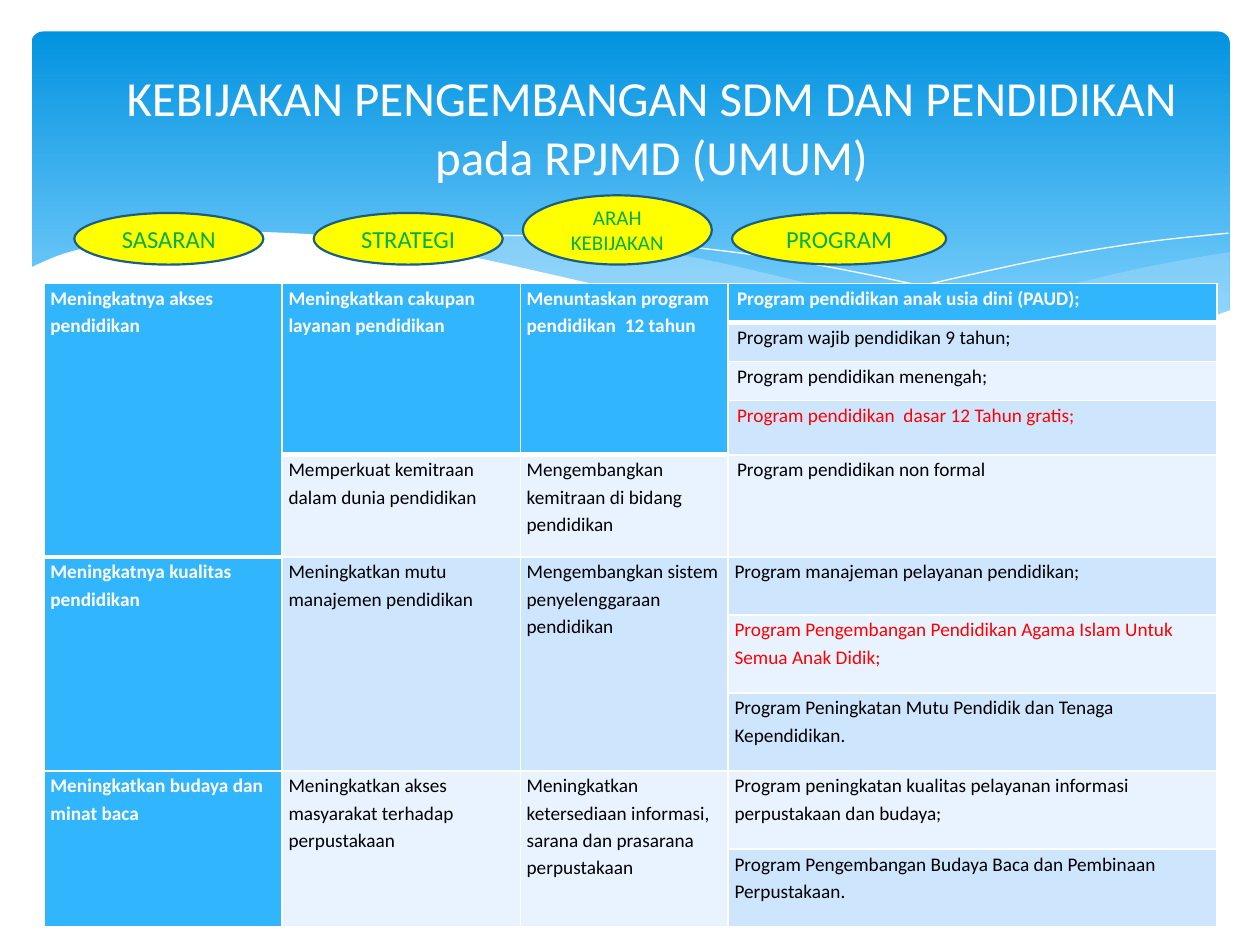
import pptx
import pptx.dml.color
import pptx.enum.shapes
import pptx.enum.text
import pptx.oxml
import pptx.oxml.ns
import pptx.util
from lxml import etree

COLORS = {
    "white": "FFFFFF", "black": "000000", "red": "FF0000", "green": "00B050",
    "yellow": "FFFF00", "outline": "195F84", "sky_top": "0293E0",
    "sky_bottom": "83D3FE", "wave": "C6E7FC", "header": "31B6FD",
    "odd": "CEE5FE", "even": "E8F3FF",
}
FONT = "Calibri"
UNIT = 9144  # one grid step: 1000 columns by 750 rows on the slide

# Knots of the waves, in grid steps
RIGHT_WAVE_TOP = [(976, 200), (935, 207), (891, 216), (832, 230), (753, 248), (661, 265)]
RIGHT_WAVE_BOTTOM = [(661, 265), (705, 271), (757, 276), (814, 278), (863, 275),
                     (913, 267), (949, 257), (976, 247)]
MIDDLE_WAVE_TOP = [(893, 273), (837, 265), (775, 254), (706, 240), (629, 222),
                   (569, 208), (514, 198), (442, 189), (361, 185), (286, 191)]
MIDDLE_WAVE_BOTTOM = [(286, 191), (342, 199), (404, 211), (449, 222), (530, 240),
                      (618, 258), (695, 270), (761, 277), (818, 278), (893, 273)]
LONG_LINE = [(309, 195), (344, 190), (401, 187), (469, 189), (556, 197),
             (636, 208), (727, 226), (831, 251), (907, 272)]
SHORT_LINE = [(613, 257), (672, 241), (748, 223), (836, 204), (910, 192), (975, 185)]
WHITE_WAVE = [(977, 246), (930, 262), (875, 273), (809, 277), (726, 272), (648, 262),
              (555, 245), (447, 220), (365, 202), (292, 190), (230, 185), (177, 184),
              (132, 186), (95, 191), (67, 197), (46, 203), (23, 213)]

OVALS = [("SASARAN", 59, 169, 150, 41, 14), ("STRATEGI", 249, 169, 150, 41, 14),
         ("ARAH KEBIJAKAN", 415, 155, 150, 55, 12), ("PROGRAM", 581, 169, 170, 41, 14)]

COLUMNS = [189, 189, 165, 388]
ROWS = [31, 31, 31, 43, 81, 46, 62, 62, 62, 62]
# (first row, column, rows spanned, text)
GOALS = [
    (0, 0, 5, "Meningkatnya akses pendidikan"),
    (0, 1, 4, "Meningkatkan cakupan layanan pendidikan"),
    (0, 2, 4, "Menuntaskan program pendidikan  12 tahun"),
    (4, 1, 1, "Memperkuat kemitraan dalam dunia pendidikan"),
    (4, 2, 1, "Mengembangkan kemitraan di bidang pendidikan"),
    (5, 0, 3, "Meningkatnya kualitas pendidikan"),
    (5, 1, 3, "Meningkatkan mutu manajemen pendidikan"),
    (5, 2, 3, "Mengembangkan sistem penyelenggaraan pendidikan"),
    (8, 0, 2, "Meningkatkan budaya dan minat baca"),
    (8, 1, 2, "Meningkatkan akses masyarakat terhadap perpustakaan"),
    (8, 2, 2, "Meningkatkan ketersediaan informasi, sarana dan prasarana perpustakaan"),
]
PROGRAMS = [
    "Program pendidikan anak usia dini (PAUD);",
    "Program wajib pendidikan 9 tahun;",
    "Program pendidikan menengah;",
    "Program pendidikan  dasar 12 Tahun gratis;",
    "Program pendidikan non formal",
    "Program manajeman pelayanan pendidikan;",
    "Program Pengembangan Pendidikan Agama Islam Untuk Semua Anak Didik;",
    "Program Peningkatan Mutu Pendidik dan Tenaga Kependidikan.",
    "Program peningkatan kualitas pelayanan informasi perpustakaan dan budaya;",
    "Program Pengembangan Budaya Baca dan Pembinaan Perpustakaan.",
]
RED_ROWS = (3, 6)
INDENTED_ROWS = 5


def rgb(name):
    return pptx.dml.color.RGBColor.from_string(COLORS[name])


def grid(*steps):
    return [round(step * UNIT) for step in steps]


def paint(target, name):
    target.fill.solid()
    target.fill.fore_color.rgb = rgb(name)


def write(frame, text, size, color, bold=False, centred=True):
    frame.text = text
    frame.word_wrap = True
    para = frame.paragraphs[0]
    if centred:
        para.alignment = pptx.enum.text.PP_ALIGN.CENTER
    font = para.runs[0].font
    font.name, font.size, font.bold = FONT, pptx.util.Pt(size), bold
    font.color.rgb = rgb(color)
    return para


def smooth(knots, steps=5):
    """Points of a Catmull-Rom curve through the knots."""
    padded = [knots[0], *knots, knots[-1]]
    points = [knots[0]]
    for a, b, c, d in zip(padded, padded[1:], padded[2:], padded[3:]):
        for step in range(1, steps + 1):
            t = step / steps
            points.append(tuple(
                q + t / 2 * (r - p + t * (2 * p - 5 * q + 4 * r - s + t * (3 * (q - r) + s - p)))
                for p, q, r, s in zip(a, b, c, d)))
    return points


def add_wave(page, box, points, fill=None, alpha=None):
    """Filled wave, or a white hairline when no fill is given."""
    places = [grid(box[0] + x, box[1] + y) for x, y in points]
    builder = page.shapes.build_freeform(*places[0], scale=1.0)
    builder.add_line_segments(places[1:], close=fill is not None)
    shape = builder.convert_to_shape()
    shape.shadow.inherit = False
    if fill is None:
        shape.fill.background()
        shape.line.color.rgb = rgb("white")
        shape.line.width = 0
        return
    paint(shape, fill)
    shape.line.fill.background()
    if alpha:
        color = shape.fill._xPr.find(".//" + pptx.oxml.ns.qn("a:srgbClr"))
        etree.SubElement(color, pptx.oxml.ns.qn("a:alpha"), val=str(alpha * 1000))


def add_backdrop(page, box):
    left, top = box[:2]
    sky = page.shapes.add_shape(pptx.enum.shapes.MSO_SHAPE.ROUNDED_RECTANGLE,
                                *grid(left + 25, top + 25, 951, 270))
    sky.adjustments[0] = 0.034
    sky.shadow.inherit = False
    sky.line.fill.background()
    sky.fill.gradient()
    sky.fill.gradient_angle = 270
    for stop, position, name in zip(sky.fill.gradient_stops, (0, 0.9), ("sky_top", "sky_bottom")):
        stop.position = position
        stop.color.rgb = rgb(name)
    add_wave(page, box, smooth(RIGHT_WAVE_TOP) + smooth(RIGHT_WAVE_BOTTOM), "wave", 29)
    add_wave(page, box, smooth(MIDDLE_WAVE_TOP) + smooth(MIDDLE_WAVE_BOTTOM), "wave", 40)
    add_wave(page, box, smooth(LONG_LINE))
    add_wave(page, box, smooth(SHORT_LINE))
    add_wave(page, box, smooth(WHITE_WAVE) + [(23, 329), (977, 329)], "white")


def add_title(page, box):
    frame = page.shapes.add_textbox(*grid(*box)).text_frame
    frame.vertical_anchor = pptx.enum.text.MSO_ANCHOR.MIDDLE
    write(frame, "KEBIJAKAN PENGEMBANGAN SDM DAN PENDIDIKAN pada RPJMD (UMUM)", 28, "white")


def add_ovals(page, box):
    for text, left, top, width, height, size in OVALS:
        oval = page.shapes.add_shape(pptx.enum.shapes.MSO_SHAPE.OVAL,
                                     *grid(box[0] + left, box[1] + top, width, height))
        oval.shadow.inherit = False
        paint(oval, "yellow")
        oval.line.color.rgb = rgb("outline")
        oval.line.width = pptx.util.Pt(1.25)
        oval.text_frame.vertical_anchor = pptx.enum.text.MSO_ANCHOR.MIDDLE
        write(oval.text_frame, text, size, "green")


def set_borders(cell, bottom):
    props = cell._tc.get_or_add_tcPr()
    for index, (side, width) in enumerate((("L", 1), ("R", 1), ("T", 1), ("B", bottom))):
        props.insert(index, pptx.oxml.parse_xml(
            f'<a:ln{side} {pptx.oxml.ns.nsdecls("a")} w="{pptx.util.Pt(width)}"><a:solidFill>'
            f'<a:srgbClr val="{COLORS["white"]}"/></a:solidFill></a:ln{side}>'))


def add_policy_table(page, box):
    table = page.shapes.add_table(len(ROWS), len(COLUMNS), *grid(*box)).table
    table.first_row = table.horz_banding = False
    for column, width in zip(table.columns, grid(*COLUMNS)):
        column.width = width
    for row, height in zip(table.rows, grid(*ROWS)):
        row.height = height
    programs = [(row, 3, 1, text) for row, text in enumerate(PROGRAMS)]
    for row, col, span, text in GOALS + programs:
        cell = table.cell(row, col)
        if span > 1:
            cell.merge(table.cell(row + span - 1, col))
        program = col == 3
        header = row == 0 or col == 0
        cell.margin_left, cell.margin_right = grid(7 if program and row < INDENTED_ROWS else 5, 5)
        cell.margin_top = cell.margin_bottom = 0
        paint(cell, "header" if header else "odd" if row % 2 else "even")
        color = "white" if header else "red" if program and row in RED_ROWS else "black"
        para = write(cell.text_frame, text, 11, color, bold=header, centred=False)
        para.line_spacing = 1.15
        set_borders(cell, bottom=3 if row == 0 else 1)


def main():
    deck = pptx.Presentation()
    deck.slide_width, deck.slide_height = grid(1000, 750)
    page = deck.slides.add_slide(deck.slide_layouts[6])
    add_backdrop(page, (0, 0, 1000, 750))
    add_title(page, (67, 32, 900, 137))
    add_policy_table(page, (35, 225, sum(COLUMNS), sum(ROWS)))
    add_ovals(page, (0, 0, 1000, 750))
    deck.save("out.pptx")


if __name__ == "__main__":
    main()
